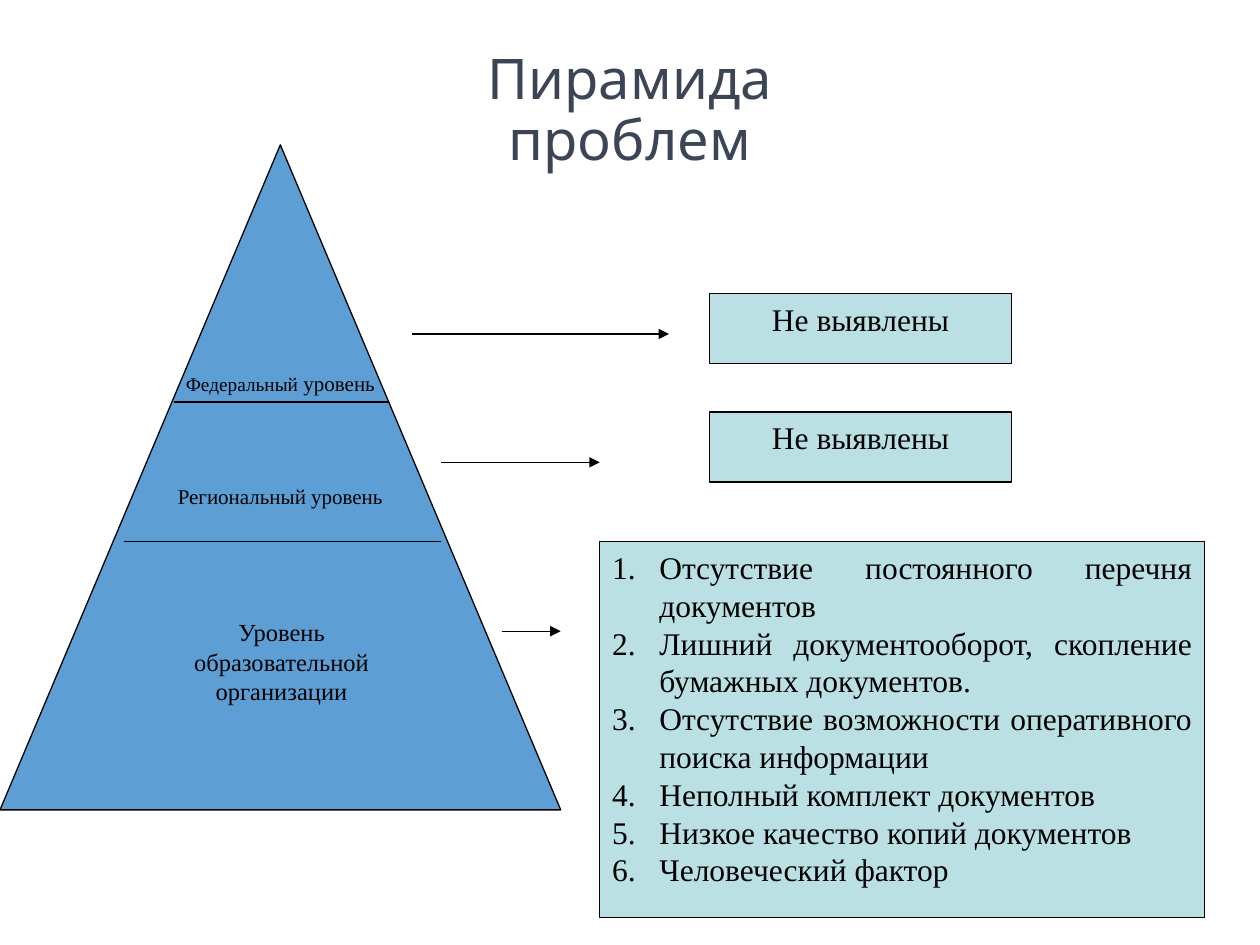
from typing import NamedTuple

from lxml import etree
from pptx import Presentation
from pptx import util as u
from pptx.dml.color import RGBColor
from pptx.enum import shapes, text
from pptx.oxml import ns

SERIF = "Times New Roman"
BLACK, BLUE, PALE = "000000", "5D9FD5", "BBE0E3"
CENTER, JUSTIFY = text.PP_ALIGN.CENTER, text.PP_ALIGN.JUSTIFY


class Box(NamedTuple):
    left: float
    top: float
    width: float
    height: float


class Run(NamedTuple):
    text: str
    size: float
    font: str = SERIF
    color: str = BLACK


class Label(NamedTuple):
    box: Box
    runs: list[Run]
    spacing: float = 1.0


class Block(NamedTuple):
    kind: int
    box: Box
    fill: str
    lines: list[Run]
    numbered: bool = False


class Rule(NamedTuple):
    left: float
    right: float
    y: float
    arrow: bool = False


def rgb(value: str) -> RGBColor:
    return RGBColor.from_string(value)


def set_frame(tf) -> None:
    settings = {
        "word_wrap": True,
        "vertical_anchor": text.MSO_ANCHOR.TOP,
        "margin_left": u.Pt(7.2),
        "margin_right": u.Pt(7.2),
        "margin_top": u.Pt(3.6),
        "margin_bottom": u.Pt(3.6),
    }
    for name, value in settings.items():
        setattr(tf, name, value)


def add_run(p, run: Run) -> None:
    r = p.add_run()
    r.text = run.text
    for name, value in {"size": u.Pt(run.size), "name": run.font}.items():
        setattr(r.font, name, value)
    r.font.color.rgb = rgb(run.color)


def number(p) -> None:
    pPr = p._p.get_or_add_pPr()
    pPr.set("marL", str(u.Pt(27)))
    pPr.set("indent", str(-u.Pt(27)))
    etree.SubElement(pPr, ns.qn("a:buFont"), typeface="+mj-lt")
    etree.SubElement(pPr, ns.qn("a:buAutoNum"), type="arabicPeriod")


def draw_label(s, label: Label) -> None:
    tf = s.shapes.add_textbox(*map(u.Pt, label.box)).text_frame
    set_frame(tf)
    p = tf.paragraphs[0]
    p.alignment = CENTER
    p.line_spacing = label.spacing
    for run in label.runs:
        add_run(p, run)


def draw_block(s, block: Block) -> None:
    sp = s.shapes.add_shape(block.kind, *map(u.Pt, block.box))
    sp.shadow.inherit = False
    sp.fill.solid()
    sp.fill.fore_color.rgb = rgb(block.fill)
    sp.line.color.rgb = rgb(BLACK)
    sp.line.width = u.Pt(0.75)
    tf = sp.text_frame
    set_frame(tf)
    for i, run in enumerate(block.lines):
        p = tf.add_paragraph() if i else tf.paragraphs[0]
        p.alignment = JUSTIFY if block.numbered else CENTER
        if block.numbered:
            number(p)
        add_run(p, run)


def draw_rule(s, rule: Rule) -> None:
    ends = map(u.Pt, (rule.left, rule.y, rule.right, rule.y))
    line = s.shapes.add_connector(shapes.MSO_CONNECTOR.STRAIGHT, *ends)
    line.line.color.rgb = rgb(BLACK)
    line.line.width = u.Pt(0.75)
    if rule.arrow:
        ln = line.line._get_or_add_ln()
        etree.SubElement(ln, ns.qn("a:tailEnd"), type="triangle")
    etree.SubElement(line._element.spPr, ns.qn("a:effectLst"))


PROBLEMS = [
    "Отсутствие постоянного перечня документов",
    "Лишний документооборот, скопление бумажных документов.",
    "Отсутствие возможности оперативного поиска информации",
    "Неполный комплект документов",
    "Низкое качество копий документов",
    "Человеческий фактор",
]
NONE_FOUND = [Run("Не выявлены", 18)]
RECT = shapes.MSO_SHAPE.RECTANGLE

PYRAMID = Block(shapes.MSO_SHAPE.ISOSCELES_TRIANGLE, Box(0, 82.8, 320.4, 380),
                BLUE, [Run("Региональный уровень", 12)])
LABELS = [
    Label(Box(206.6, 25.9, 306.7, 46),
          [Run("Пирамида проблем", 32, "Quicksand", "3B4555")], 0.9),
    Label(Box(-126, 208, 572.4, 21.6),
          [Run("Федеральный", 11), Run(" уровень", 12)]),
    Label(Box(99.4, 349.2, 123, 58.3),
          [Run("Уровень образовательной организации", 14)]),
]
RULES = [
    # Borders between the levels
    Rule(99.4, 222.5, 229.7),
    Rule(70.6, 252, 309.6),
    # Arrows to the findings
    Rule(235.4, 382.3, 190.8, True),
    Rule(252, 342.7, 264.2, True),
    Rule(286.6, 320.4, 360.7, True),
]
FINDINGS = [
    Block(RECT, Box(405.4, 167.8, 172.8, 40), PALE, NONE_FOUND),
    Block(RECT, Box(405.4, 235.4, 172.8, 40), PALE, NONE_FOUND),
    Block(RECT, Box(342.7, 309.6, 345.6, 214.6), PALE,
          [Run(problem, 18) for problem in PROBLEMS], True),
]


def main() -> None:
    prs = Presentation()
    prs.slide_width, prs.slide_height = u.Pt(720), u.Pt(540)
    s = prs.slides.add_slide(prs.slide_layouts[6])

    # Pyramid with its title and level names
    draw_block(s, PYRAMID)
    for label in LABELS:
        draw_label(s, label)

    # Level borders, arrows and findings
    for rule in RULES:
        draw_rule(s, rule)
    for finding in FINDINGS:
        draw_block(s, finding)

    prs.save("out.pptx")


if __name__ == "__main__":
    main()
